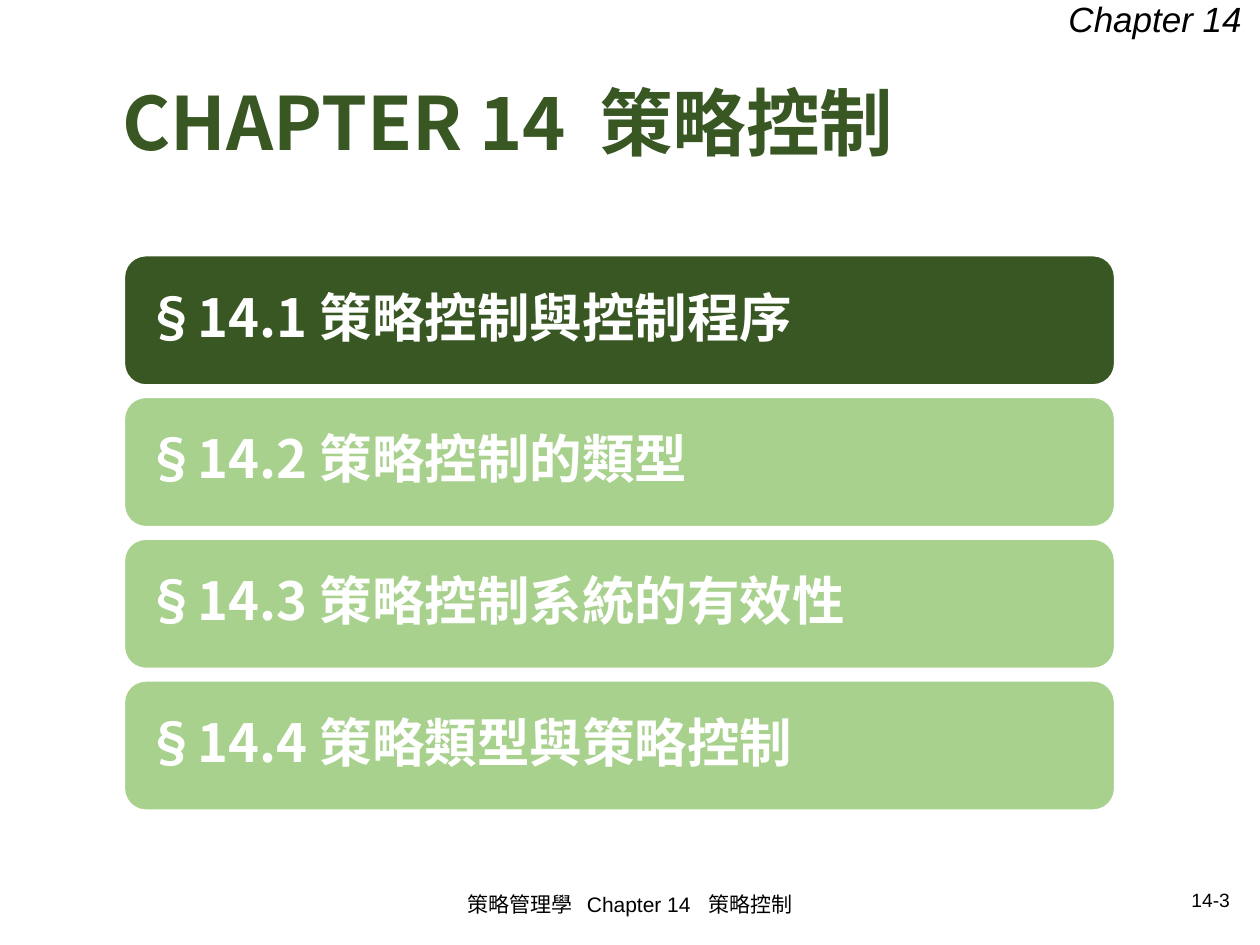
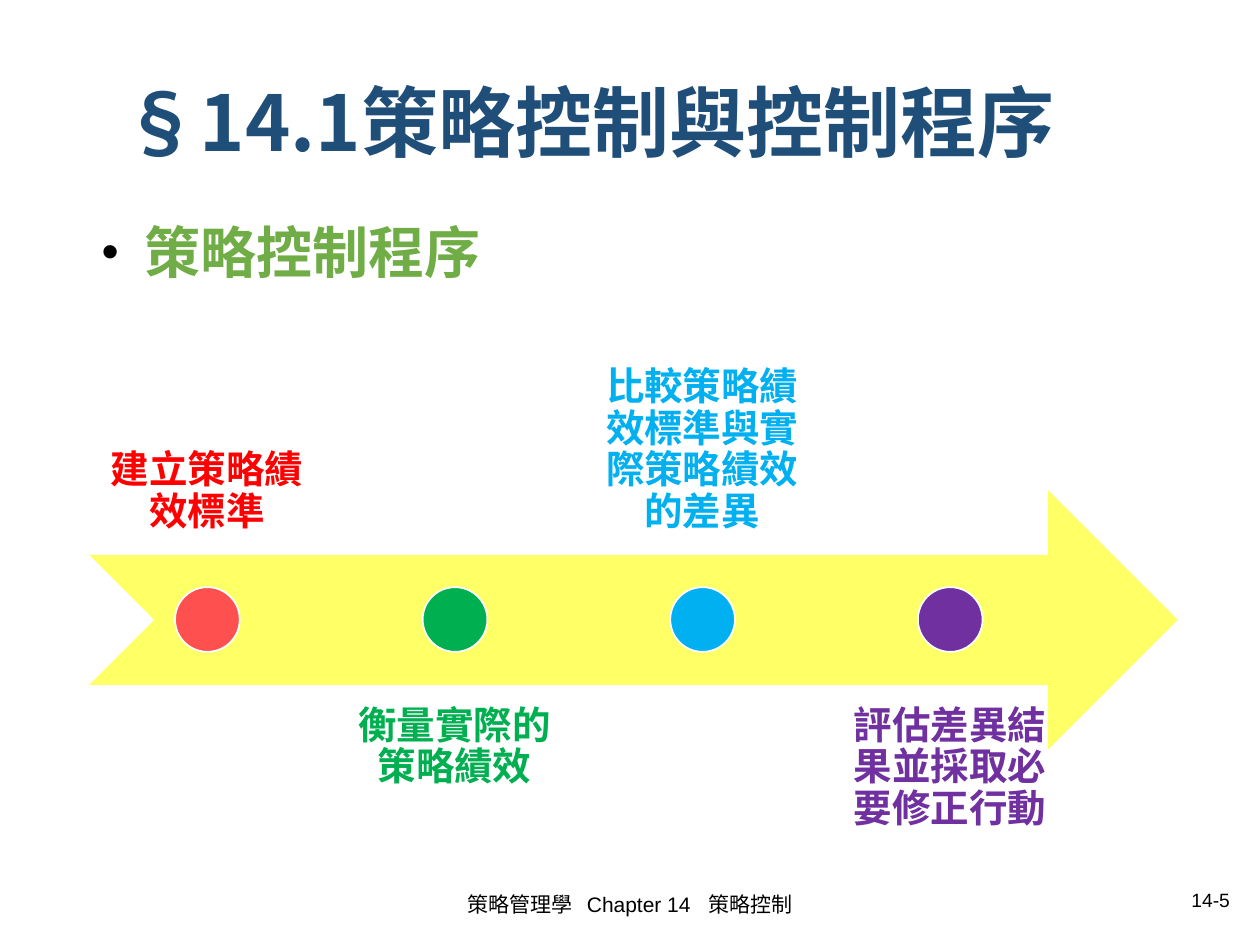
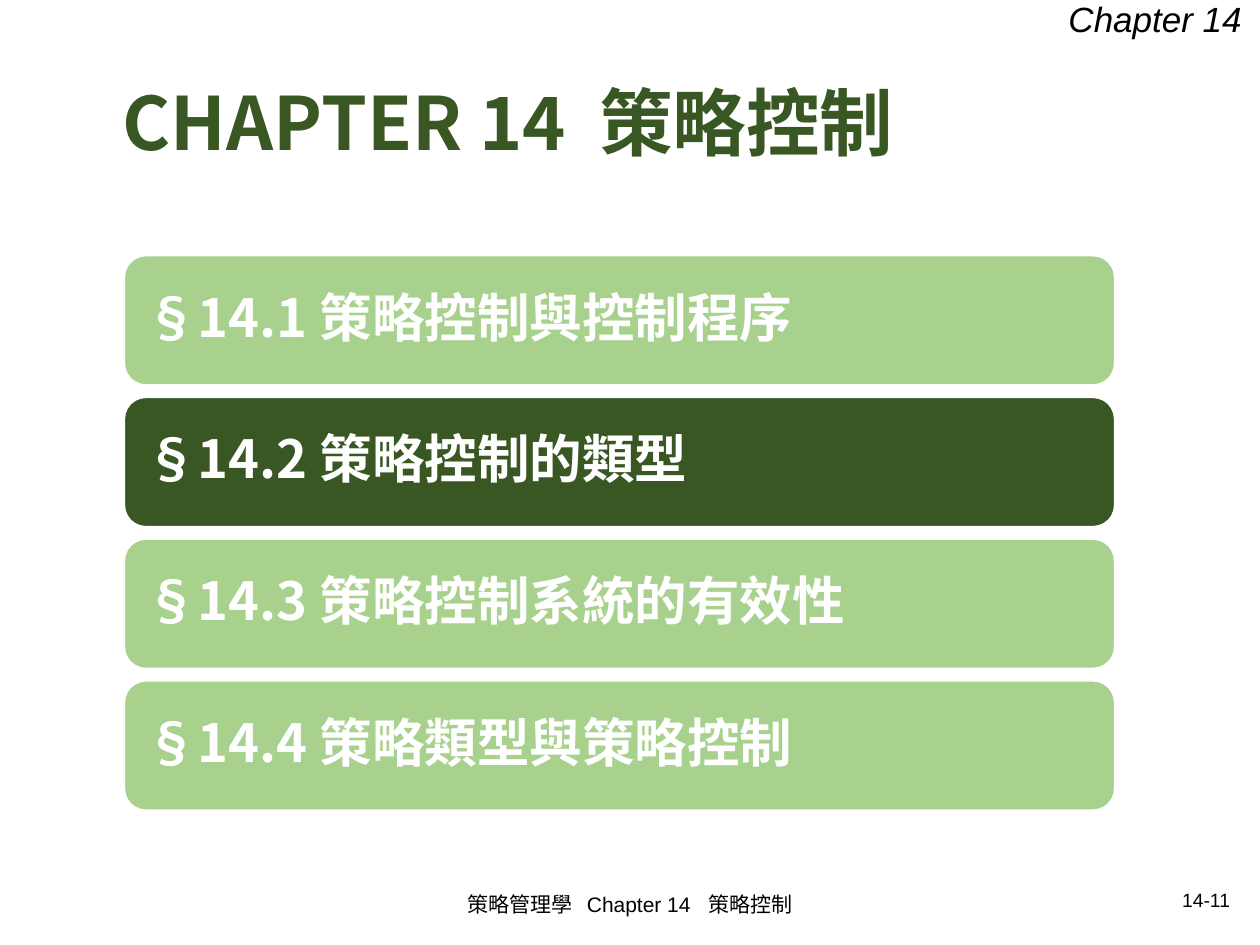
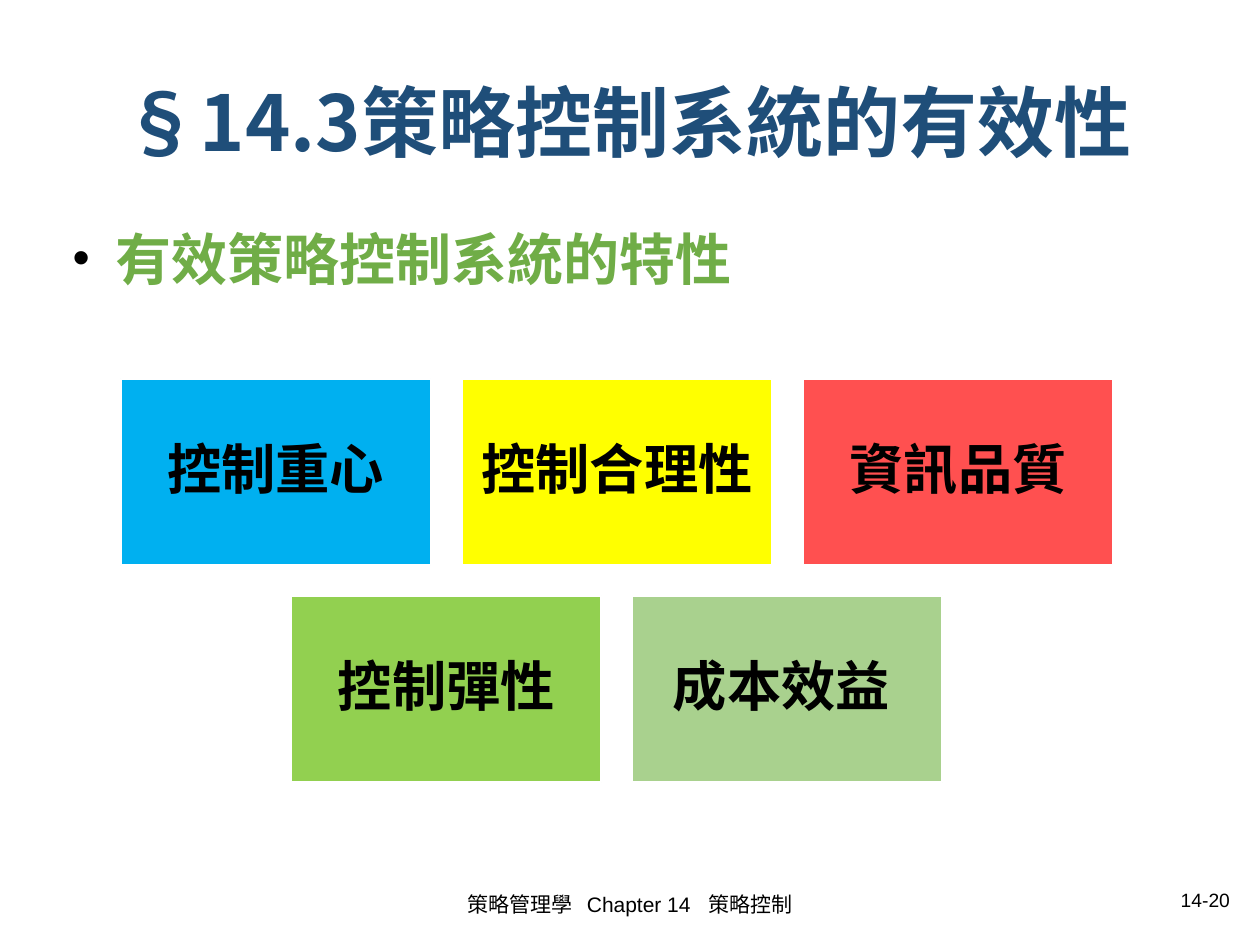
"""Build four slides of a strategy control chapter."""
import lxml.etree
import pptx
import pptx.dml.color
import pptx.enum.lang
import pptx.enum.shapes
import pptx.enum.text
import pptx.oxml.ns
import pptx.util

Pt = pptx.util.Pt
ALIGN = pptx.enum.text.PP_ALIGN
ANCHOR = pptx.enum.text.MSO_ANCHOR
SHAPE = pptx.enum.shapes.MSO_SHAPE
qn = pptx.oxml.ns.qn

COLORS = {
    "black": "000000", "white": "FFFFFF", "dark_green": "385723",
    "light_green": "A9D18E", "heading_green": "70AD47", "navy": "1F4E79",
    "pale_yellow": "FFFF66", "yellow": "FFFF00", "red": "FF0000",
    "coral": "FF5050", "green": "00B050", "blue": "00B0F0",
    "purple": "7030A0", "lime": "92D050",
}
CJK = "Noto Sans CJK SC"
FORMATS = {
    "footer": {"name": "Arial", "size": Pt(12)},
    "number": {"name": "Arial", "size": Pt(11)},
    "corner": {"name": "Arial", "size": Pt(20), "italic": True},
    "chapter": {"name": CJK, "size": Pt(42), "bold": True},
    "section": {"name": CJK, "size": Pt(44), "bold": True},
    "lead": {"name": "Times New Roman", "size": Pt(28), "bold": True},
    "heading": {"name": CJK, "size": Pt(32), "bold": True},
    "bar": {"name": CJK, "size": Pt(30), "bold": True},
    "label": {"name": CJK, "size": Pt(22), "bold": True},
    "card": {"name": CJK, "size": Pt(31), "bold": True},
}
SECTIONS = ["§14.1 策略控制與控制程序", "§14.2 策略控制的類型",
            "§14.3 策略控制系統的有效性", "§14.4 策略類型與策略控制"]
STEPS = [("建立策略績效標準", "red", "coral"),
         ("衡量實際的策略績效", "green", "green"),
         ("比較策略績效標準與實際策略績效的差異", "blue", "blue"),
         ("評估差異結果並採取必要修正行動", "purple", "purple")]
FEATURE_ROWS = [[("控制重心", "blue"), ("控制合理性", "yellow"), ("資訊品質", "coral")],
                [("控制彈性", "lime"), ("成本效益 ", "light_green")]]


def rgb(color):
    return pptx.dml.color.RGBColor.from_string(COLORS[color])


class Deck:
    def __init__(self):
        self.presentation = pptx.Presentation()
        self.presentation.slide_width = Pt(720)
        self.presentation.slide_height = Pt(540)
        self.slide = None

    def new_slide(self, number):
        self.slide = self.presentation.slides.add_slide(self.presentation.slide_layouts[6])
        self.text((238.5, 502, 243, 29), "策略管理學   Chapter 14   策略控制", "footer",
                  align=ALIGN.CENTER, anchor=ANCHOR.MIDDLE)
        self.text((508.5, 503, 201.5, 22), f"14-{number}", "number",
                  align=ALIGN.RIGHT, anchor=ANCHOR.MIDDLE)

    def add_run(self, paragraph, text, style, color):
        run = paragraph.add_run()
        run.text = text
        run.font.color.rgb = rgb(color)
        run.font.language_id = pptx.enum.lang.MSO_LANGUAGE_ID.TRADITIONAL_CHINESE
        for key, value in FORMATS[style].items():
            setattr(run.font, key, value)
        lxml.etree.SubElement(run.font._element, qn("a:ea"), typeface=CJK)

    def set_text(self, shape, text, style, color="black", align=ALIGN.LEFT,
                 anchor=ANCHOR.TOP, inset=None, spacing=None):
        frame = shape.text_frame
        frame.word_wrap = True
        frame.vertical_anchor = anchor
        if inset is not None:
            for side in ("left", "top", "right", "bottom"):
                setattr(frame, f"margin_{side}", Pt(inset))
        paragraph = frame.paragraphs[0]
        paragraph.alignment = align
        paragraph.line_spacing = spacing
        self.add_run(paragraph, text, style, color)
        return paragraph

    def text(self, box, text, style, **options):
        shape = self.slide.shapes.add_textbox(*map(Pt, box))
        return self.set_text(shape, text, style, **options)

    def shape(self, kind, box, fill, line="white"):
        shape = self.slide.shapes.add_shape(kind, *map(Pt, box))
        shape.shadow.inherit = False
        shape.fill.solid()
        shape.fill.fore_color.rgb = rgb(fill)
        if line:
            shape.line.color.rgb = rgb(line)
            shape.line.width = Pt(1)
        else:
            shape.line.fill.background()
        return shape

    def title(self, text, style, color):
        self.text((63, 43, 598.5, 59), text, style, color=color,
                  anchor=ANCHOR.MIDDLE, spacing=0.9)

    def bullet(self, left, top, text):
        paragraph = self.text((left, top, 598.5, 356.5), " ", "lead")
        properties = paragraph._p.get_or_add_pPr()
        properties.set("marL", str(Pt(18)))
        properties.set("indent", str(-Pt(18)))
        lxml.etree.SubElement(properties, qn("a:buFont"), typeface="Arial")
        lxml.etree.SubElement(properties, qn("a:buChar"), char="•")
        self.add_run(paragraph, text, "heading", "heading_green")

    def agenda(self, number, current):
        self.new_slide(number)
        self.title("CHAPTER 14  策略控制", "chapter", "dark_green")
        self.text((603.5, -5, 116.5, 31.5), "Chapter 14", "corner")
        for index, section in enumerate(SECTIONS):
            fill = "dark_green" if index == current else "light_green"
            bar = self.shape(SHAPE.ROUNDED_RECTANGLE, (71, 146 + 81 * index, 566, 74), fill)
            self.set_text(bar, section, "bar", color="white", anchor=ANCHOR.MIDDLE,
                          inset=8.5, spacing=0.9)

    def process(self, number):
        self.new_slide(number)
        self.title("§14.1策略控制與控制程序", "section", "navy")
        self.bullet(51, 121, "策略控制程序")
        self.shape(SHAPE.NOTCHED_RIGHT_ARROW, (51, 280, 622, 148.5), "pale_yellow", line=None)
        for index, (label, color, fill) in enumerate(STEPS):
            left = 51 + 141.5 * index
            above = index % 2 == 0
            self.text((left, 168.5 if above else 391.5, 134.5, 148.5), label, "label",
                      color=color, align=ALIGN.CENTER, inset=12, spacing=0.9,
                      anchor=ANCHOR.BOTTOM if above else ANCHOR.TOP)
            self.shape(SHAPE.OVAL, (left + 49, 335.5, 37, 37), fill)

    def features(self, number):
        self.new_slide(number)
        self.title("§14.3策略控制系統的有效性", "section", "navy")
        self.bullet(34.5, 124.5, "有效策略控制系統的特性")
        width, pitch, center = 177, 195, 352.5
        for row, features in enumerate(FEATURE_ROWS):
            start = center - (width + pitch * (len(features) - 1)) / 2
            for column, (feature, fill) in enumerate(features):
                card = self.shape(SHAPE.RECTANGLE, (start + pitch * column, 216.5 + 124 * row,
                                                    width, 106.5), fill)
                self.set_text(card, feature, "card", align=ALIGN.CENTER,
                              anchor=ANCHOR.MIDDLE, inset=9.5, spacing=0.9)


def main():
    deck = Deck()
    deck.agenda(3, current=0)
    deck.process(5)
    deck.agenda(11, current=1)
    deck.features(20)
    deck.presentation.save("out.pptx")


if __name__ == "__main__":
    main()
